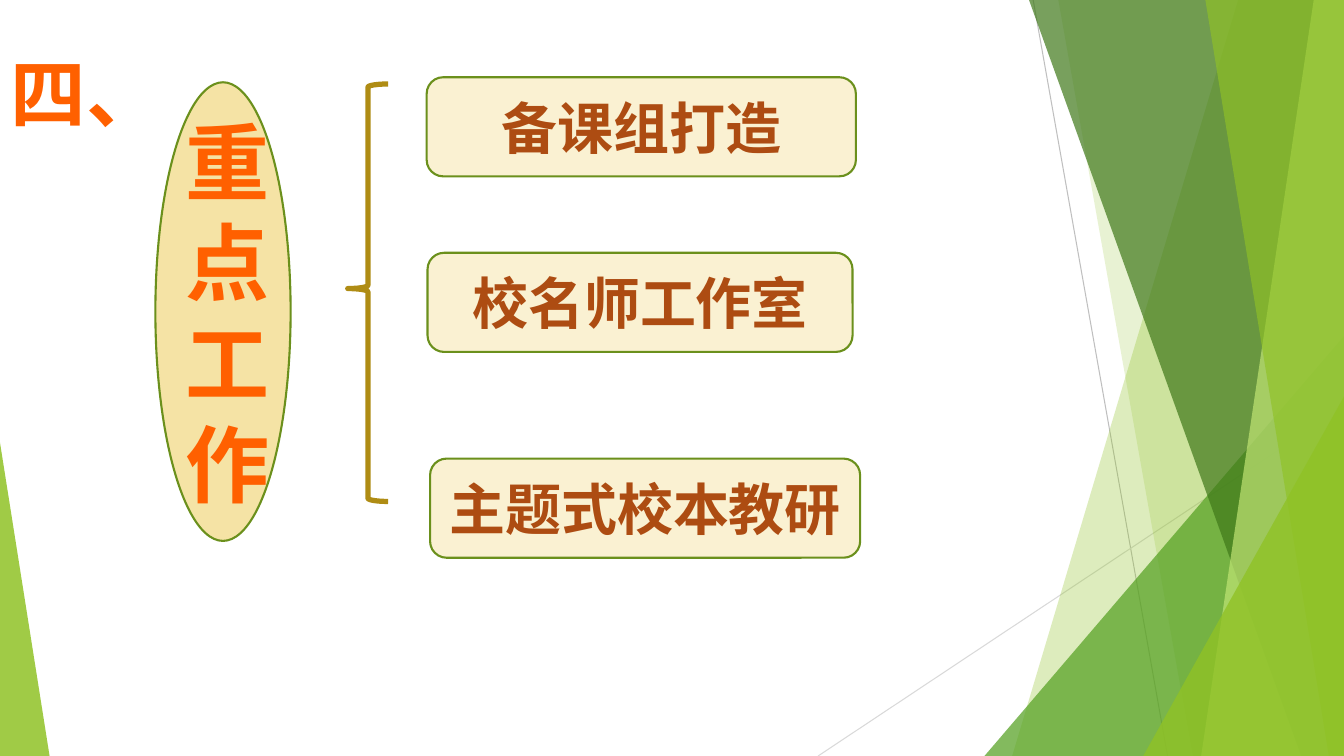
"""Build the key work slide on a grid of sixteen columns by nine rows."""
import dataclasses
import typing

import lxml.etree
import pptx
import pptx.dml.color
import pptx.enum.shapes
import pptx.enum.text
import pptx.oxml.ns
import pptx.util

KIND = pptx.enum.shapes.MSO_SHAPE
COLS, ROWS = 16, 9


@dataclasses.dataclass(frozen=True)
class Theme:
    font: str = "Lato"
    green: str = "90C226"
    leaf: str = "54A021"
    moss: str = "3F7819"
    lime: str = "C0E474"
    gray: str = "BFBFBF"
    pale: str = "D9D9D9"
    cream: str = "FAF1D2"
    sand: str = "F5E3A5"
    edge: str = "6B901C"
    gold: str = "AF8C14"
    rust: str = "AD4C12"
    flame: str = "FF6000"
    item: int = 40
    head: int = 54
    core: int = 60
    hair: float = 0.75
    thin: float = 1.5
    thick: float = 3.75


@dataclasses.dataclass(frozen=True)
class Area:
    left: float
    top: float
    width: float
    height: float


@dataclasses.dataclass(frozen=True)
class Ray:
    start: tuple[float, float]
    end: tuple[float, float]
    color: str


@dataclasses.dataclass(frozen=True)
class Band:
    top: float
    foot: float
    color: str
    alpha: int


@dataclasses.dataclass(frozen=True)
class Wedge:
    area: Area
    apex: float
    color: str
    alpha: int


@dataclasses.dataclass(frozen=True)
class Label:
    area: Area
    text: str
    kind: typing.Any
    fill: str
    color: str
    size: int


THEME = Theme()
RAYS = (
    Ray((12.3, 0), (13.9, ROWS), THEME.gray),
    Ray((COLS, 4.84), (9.74, ROWS), THEME.pale),
)
SHARDS = (
    Band(14.74, 12.05, THEME.green, 30),
    Band(12.6, 14.2, THEME.green, 20),
    Wedge(Area(11.72, 4, 4.28, 5), 1, THEME.leaf, 72),
    Band(12.25, 15.49, THEME.moss, 70),
    Band(15.64, 14.3, THEME.lime, 70),
    Band(14.35, 15.82, THEME.green, 65),
    Wedge(Area(13.61, 4.72, 2.39, 4.28), 1, THEME.green, 80),
    Wedge(Area(0, 5.27, 0.59, 3.73), 0, THEME.green, 85),
)
ITEMS = (
    ("备课组打造", 5.08, 0.92, 5.11),
    ("校名师工作室", 5.09, 3.01, 5.06),
    ("主题式校本教研", 5.12, 5.46, 5.12),
)
LABELS = tuple(
    Label(Area(left, top, width, 1.18), text, KIND.ROUNDED_RECTANGLE,
          THEME.cream, THEME.rust, THEME.item)
    for text, left, top, width in ITEMS
) + (
    Label(Area(1.85, 0.98, 1.61, 5.46), "重点工作", KIND.OVAL,
          THEME.sand, THEME.flame, THEME.core),
)
BRACE = Area(4.14, 1, 0.48, 4.97)
HEAD = Area(0, 0.5, 2.06, 1.21)


def unit(count: float) -> int:
    return pptx.util.Inches(count * 13.333 / COLS)


def place(area: Area) -> tuple[int, ...]:
    return tuple(unit(part) for part in dataclasses.astuple(area))


def tint(code: str) -> pptx.dml.color.RGBColor:
    return pptx.dml.color.RGBColor.from_string(code)


def stroke(shape: typing.Any, color: str, width: float) -> None:
    shape.line.color.rgb = tint(color)
    shape.line.width = pptx.util.Pt(width)


def glaze(shape: typing.Any, color: str, alpha: int) -> None:
    shape.shadow.inherit = False
    shape.line.fill.background()
    shape.fill.solid()
    shape.fill.fore_color.rgb = tint(color)
    name = pptx.oxml.ns.qn("a:srgbClr")
    node = next(shape._element.spPr.iter(name))
    lxml.etree.SubElement(node, pptx.oxml.ns.qn("a:alpha"), val=str(alpha * 1000))


def write(shape: typing.Any, text: str, color: str, size: int) -> None:
    line = shape.text_frame.paragraphs[0]
    line.text = text
    line.alignment = pptx.enum.text.PP_ALIGN.CENTER
    line.font.name = THEME.font
    line.font.size = pptx.util.Pt(size)
    line.font.bold = True
    line.font.color.rgb = tint(color)


def draw_ray(shapes: typing.Any, ray: Ray) -> None:
    ends = [unit(part) for part in ray.start + ray.end]
    line = shapes.add_connector(pptx.enum.shapes.MSO_CONNECTOR.STRAIGHT, *ends)
    stroke(line, ray.color, THEME.hair)
    lxml.etree.SubElement(line._element.spPr, pptx.oxml.ns.qn("a:effectLst"))


def draw_shard(shapes: typing.Any, shard: Band | Wedge) -> None:
    if isinstance(shard, Band):
        path = shapes.build_freeform(unit(shard.top), 0)
        spots = ((COLS, 0), (COLS, ROWS), (shard.foot, ROWS))
        path.add_line_segments([(unit(x), unit(y)) for x, y in spots])
        shape = path.convert_to_shape()
    else:
        shape = shapes.add_shape(KIND.ISOSCELES_TRIANGLE, *place(shard.area))
        shape.adjustments[0] = shard.apex
    glaze(shape, shard.color, shard.alpha)


def draw_label(shapes: typing.Any, label: Label) -> None:
    shape = shapes.add_shape(label.kind, *place(label.area))
    shape.shadow.inherit = False
    shape.fill.solid()
    shape.fill.fore_color.rgb = tint(label.fill)
    stroke(shape, THEME.edge, THEME.thin)
    shape.text_frame.word_wrap = True
    shape.text_frame.vertical_anchor = pptx.enum.text.MSO_ANCHOR.MIDDLE
    write(shape, label.text, label.color, label.size)


def draw_brace(shapes: typing.Any) -> None:
    brace = shapes.add_shape(KIND.LEFT_BRACE, *place(BRACE))
    brace.shadow.inherit = False
    brace.fill.background()
    stroke(brace, THEME.gold, THEME.thick)
    brace.adjustments[0] = 0.08
    brace.adjustments[1] = 0.49


def draw_head(shapes: typing.Any) -> None:
    head = shapes.add_textbox(*place(HEAD))
    head.text_frame.word_wrap = False
    head.text_frame.auto_size = pptx.enum.text.MSO_AUTO_SIZE.SHAPE_TO_FIT_TEXT
    write(head, "四、", THEME.flame, THEME.head)


def main() -> None:
    deck = pptx.Presentation()
    deck.slide_width, deck.slide_height = unit(COLS), unit(ROWS)
    shapes = deck.slides.add_slide(deck.slide_layouts[6]).shapes
    for ray in RAYS:
        draw_ray(shapes, ray)
    for shard in SHARDS:
        draw_shard(shapes, shard)
    for label in LABELS:
        draw_label(shapes, label)
    draw_brace(shapes)
    draw_head(shapes)
    deck.save("out.pptx")


if __name__ == "__main__":
    main()
